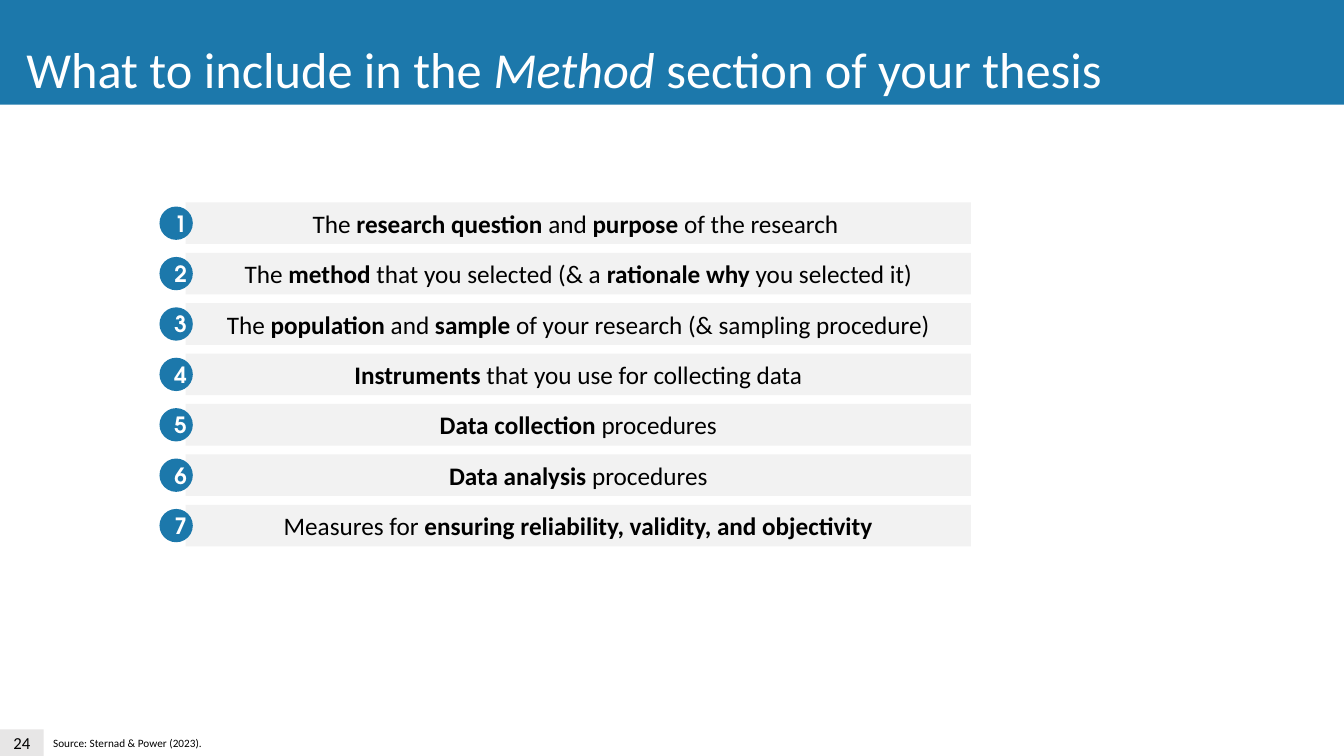
from pptx import Presentation
from pptx.dml.color import RGBColor
from pptx.enum.shapes import MSO_SHAPE
from pptx.enum.text import MSO_ANCHOR, MSO_AUTO_SIZE, PP_ALIGN
from pptx.util import Cm, Pt

# Each run is (text, marked); marked runs take the emphasis of their part
TITLE = [("What to include in the ", False), ("Method ", True),
         ("section of your thesis", False)]
ITEMS = [
    [("The ", False), ("research question ", True), ("and ", False),
     ("purpose ", True), ("of the research ", False)],
    [("The ", False), ("method ", True), ("that you selected (& a ", False),
     ("rationale why ", True), ("you selected it)", False)],
    [("The ", False), ("population ", True), ("and ", False),
     ("sample ", True),
     ("of your research (& sampling procedure)", False)],
    [("Instruments ", True), ("that you use for collecting data", False)],
    [("Data collection ", True), ("procedures", False)],
    [("Data analysis ", True), ("procedures", False)],
    [("Measures for ", False),
     ("ensuring reliability, validity, and objectivity", True)],
]
SOURCE = [("Source: Sternad & Power (2023).", False)]
PAGE = [("24", False)]

COLORS = {"blue": "1C78AB", "bar": "F2F2F2", "page": "E7E6E6",
          "black": "000000", "white": "FFFFFF"}

# Font name, size, colour and the attribute that marks emphasis
FONTS = {
    "title": ("Calibri", 36, "white", "italic"),
    "item": ("Calibri", 18, "black", "bold"),
    "badge": ("TeX Gyre Adventor", 16, "white", "bold"),
    "page": ("Calibri", 12, "black", "bold"),
    "source": ("Calibri", 8, "black", "bold"),
}

WIDTH, HEIGHT = Cm(33.87), Cm(19.05)
TOP, PITCH = 5.1, 1.27
BAR = {"left": 4.68, "width": 19.79, "height": 1.05}
BADGE = {"left": 4.02, "size": 0.84}


def color(name):
    return RGBColor.from_string(COLORS[name])


def write(shape, runs, kind, align, anchor):
    name, size, tint, mark = FONTS[kind]
    frame = shape.text_frame
    frame.vertical_anchor = anchor
    para = frame.paragraphs[0]
    para.alignment = align
    for text, marked in runs:
        run = para.add_run()
        run.text = text
        look = {"name": name, "size": Pt(size), mark: marked}
        for key, value in look.items():
            setattr(run.font, key, value)
        run.font.color.rgb = color(tint)


def block(slide, form, box, fill, runs=(), kind="item"):
    """Add a filled shape without outline, its text centred."""
    shape = slide.shapes.add_shape(form, *map(Cm, box))
    shape.shadow.inherit = False
    shape.fill.solid()
    shape.fill.fore_color.rgb = color(fill)
    shape.line.fill.background()
    write(shape, runs, kind, PP_ALIGN.CENTER, MSO_ANCHOR.MIDDLE)


def label(shape, box, runs, kind):
    """Place a left-aligned text that stays on one line."""
    sides = ("left", "top", "width", "height")
    for side, value in zip(sides, box):
        setattr(shape, side, Cm(value))
    write(shape, runs, kind, PP_ALIGN.LEFT, MSO_ANCHOR.TOP)
    shape.text_frame.word_wrap = False
    shape.text_frame.auto_size = MSO_AUTO_SIZE.SHAPE_TO_FIT_TEXT


def main():
    deck = Presentation()
    deck.slide_width, deck.slide_height = WIDTH, HEIGHT
    slide = deck.slides.add_slide(deck.slide_layouts[5])
    shapes = slide.shapes
    title = shapes.title

    block(slide, MSO_SHAPE.RECTANGLE, (0, 18.38, 1.1, 0.67), "page",
          PAGE, "page")

    inset = (BAR["height"] - BADGE["size"]) / 2
    for num, runs in enumerate(ITEMS):
        top = TOP + num * PITCH
        bar = (BAR["left"], top, BAR["width"], BAR["height"])
        disc = (BADGE["left"], top + inset, BADGE["size"], BADGE["size"])
        block(slide, MSO_SHAPE.RECTANGLE, bar, "bar", runs)
        block(slide, MSO_SHAPE.OVAL, disc, "blue",
              [(str(num + 1), True)], "badge")

    block(slide, MSO_SHAPE.RECTANGLE, (0, -0.03, 33.88, 2.67), "blue")
    # Lift the title above its band
    title.element.getparent().append(title.element)
    label(title, (0.41, 0.84, 27.94, 1.8), TITLE, "title")
    note = shapes.add_textbox(0, 0, 0, 0)
    label(note, (1.09, 18.44, 4.29, 0.6), SOURCE, "source")

    deck.save("out.pptx")


if __name__ == "__main__":
    main()
